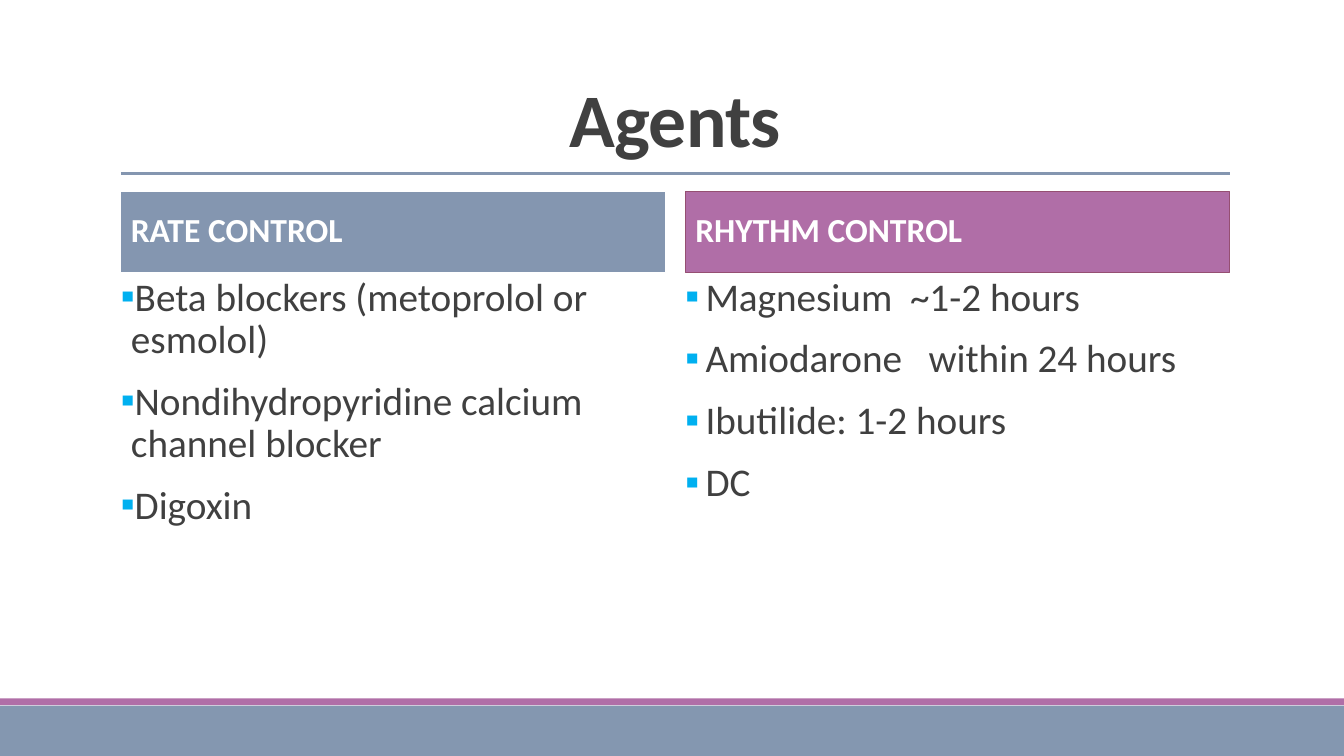
from lxml import etree
from pptx import Presentation
from pptx.dml.color import RGBColor
from pptx.enum.shapes import MSO_CONNECTOR, MSO_SHAPE
from pptx.enum.text import MSO_ANCHOR, PP_ALIGN
from pptx.oxml.ns import qn
from pptx.util import Pt

RECT = MSO_SHAPE.RECTANGLE
STRAIGHT = MSO_CONNECTOR.STRAIGHT
MIDDLE, BOTTOM = MSO_ANCHOR.MIDDLE, MSO_ANCHOR.BOTTOM
LEFT, CENTER = PP_ALIGN.LEFT, PP_ALIGN.CENTER

COLORS = {
    "text": "404040", "white": "FFFFFF", "slate": "8496B0", "footer": "8497B0",
    "plum": "B06EA7", "plum_edge": "954F72", "bullet": "00B0F0",
}
FONT = "Calibri"
SLIDE_W, SLIDE_H = 960, 540
MARGIN, COLUMN_W, COLUMN_STEP = 86.4, 388.8, 403.2
HEADER_TOP, HEADER_H = 136.8, 58
LIST_TOP, LIST_H = 194.4, 281.5

COLUMNS = [
    ("RATE CONTROL", "slate", "white", 7.2, [
        ["Beta blockers (metoprolol or esmolol)"],
        ["Nondihydropyridine calcium channel blocker"],
        ["Digoxin"],
    ]),
    ("RHYTHM CONTROL", "plum", "plum_edge", 14.4, [
        ["Magnesium", 6.3, "~1-2 hours"],
        ["Amiodarone", 12.6, "within 24 hours"],
        ["Ibutilide: 1-2 hours"],
        ["DC"],
    ]),
]


def rgb(name):
    """Return the named colour."""
    return RGBColor.from_string(COLORS[name])


def add_run(p, text, size, color, bold=False, spacing=0):
    """Append a run, with optional letter spacing in points."""
    r = p.add_run()
    r.text = text
    r.font.name = FONT
    r.font.size = Pt(size)
    r.font.bold = bold
    r.font.color.rgb = rgb(color)
    if spacing:
        r._r.get_or_add_rPr().set("spc", str(round(spacing * 100)))


def add_rect(slide, x, y, w, h, fill, line=None):
    """Add a flat rectangle with an optional outline."""
    sp = slide.shapes.add_shape(RECT, Pt(x), Pt(y), Pt(w), Pt(h))
    sp.shadow.inherit = False
    sp.fill.solid()
    sp.fill.fore_color.rgb = rgb(fill)
    if line:
        sp.line.color.rgb = rgb(line)
        sp.line.width = Pt(0.75)
    else:
        sp.line.fill.background()
    return sp


def add_title(slide, text):
    """Add the centred title and the rule below it."""
    rule = slide.shapes.add_connector(
        STRAIGHT, Pt(MARGIN), Pt(123.8), Pt(SLIDE_W - 81.6), Pt(123.8))
    rule.line.color.rgb = rgb("slate")
    rule.line.width = Pt(2.25)
    etree.SubElement(rule._element.spPr, qn("a:effectLst"))
    tf = slide.shapes.add_textbox(Pt(MARGIN), Pt(22.3), Pt(792), Pt(97.9)).text_frame
    tf.word_wrap = True
    tf.vertical_anchor = BOTTOM
    p = tf.paragraphs[0]
    p.alignment = CENTER
    p.line_spacing = 0.85
    add_run(p, text, 54, "text", bold=True, spacing=-0.5)


def add_header(slide, x, text, fill, line):
    """Add a coloured column header."""
    tf = add_rect(slide, x, HEADER_TOP, COLUMN_W, HEADER_H, fill, line).text_frame
    tf.word_wrap = True
    tf.vertical_anchor = MIDDLE
    p = tf.paragraphs[0]
    p.alignment = LEFT
    p.line_spacing = 0.9
    add_run(p, text, 24, "white", bold=True)


def set_bullet(p, indent):
    """Give a paragraph a square bullet and a hanging indent."""
    pPr = p._p.get_or_add_pPr()
    pPr.set("marL", str(Pt(indent)))
    pPr.set("indent", str(Pt(-14.4)))
    color = etree.SubElement(pPr, qn("a:buClr"))
    etree.SubElement(color, qn("a:srgbClr"), val=COLORS["bullet"])
    etree.SubElement(pPr, qn("a:buFont"), typeface=FONT)
    etree.SubElement(pPr, qn("a:buChar"), char="▪")


def add_list(slide, x, items, indent):
    """Add a bulleted list; a number in an item widens a space."""
    tf = slide.shapes.add_textbox(Pt(x), Pt(LIST_TOP), Pt(COLUMN_W), Pt(LIST_H)).text_frame
    tf.word_wrap = True
    tf.margin_left = tf.margin_right = 0
    for i, item in enumerate(items):
        p = tf.add_paragraph() if i else tf.paragraphs[0]
        set_bullet(p, indent)
        p.line_spacing = 0.9
        p.space_before = Pt(12 if i else 0)
        p.space_after = Pt(2)
        for part in item:
            if isinstance(part, str):
                add_run(p, part, 28, "text")
            else:
                add_run(p, " ", 28, "text", spacing=part)


def main():
    """Build the slide and save it."""
    prs = Presentation()
    prs.slide_width, prs.slide_height = Pt(SLIDE_W), Pt(SLIDE_H)
    slide = prs.slides.add_slide(prs.slide_layouts[6])
    add_rect(slide, 0, 504, SLIDE_W, 36, "footer")
    add_rect(slide, 0, 498.8, SLIDE_W, 5, "plum")
    add_title(slide, "Agents")
    for i, (heading, fill, line, indent, items) in enumerate(COLUMNS):
        x = MARGIN + i * COLUMN_STEP
        add_header(slide, x, heading, fill, line)
        add_list(slide, x, items, indent)
    prs.save("out.pptx")


if __name__ == "__main__":
    main()
